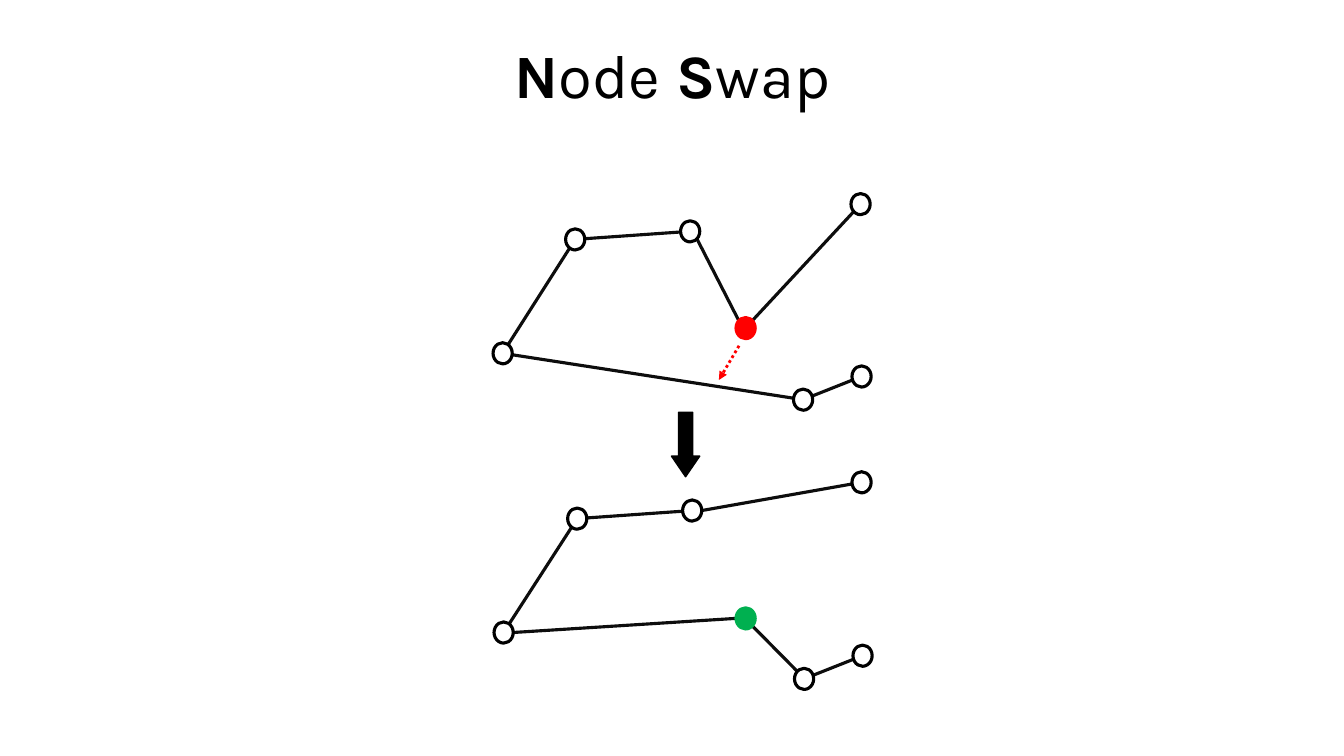
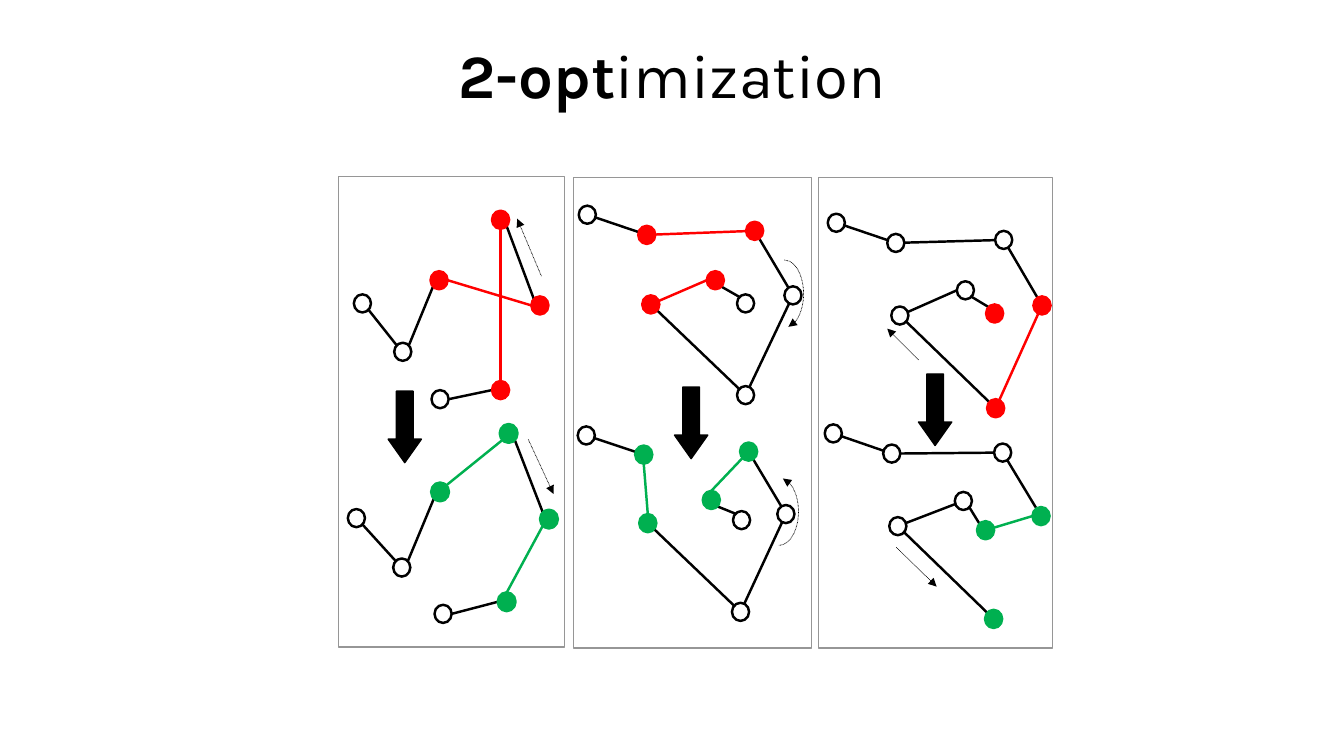
import pptx
import pptx.dml.color
import pptx.enum.dml
import pptx.enum.shapes
import pptx.enum.text
import pptx.oxml.ns
import pptx.util
from lxml import etree

SHAPE = pptx.enum.shapes.MSO_SHAPE
PX = 9144  # EMU; 100 px to the inch
BLACK, INK, WHITE, GREY = "000000", "0D0D0D", "FFFFFF", "969696"
RED, GREEN = "FF0000", "00B050"

# ---- Content -------------------------------------------------------------
# Each tour: left and top of its nodes, the marked nodes and their colour,
# and edges "node:side-node:side" (no side means the centre of the node).
NODE_SWAP = {
    "title": [("N", True), ("ode", False), (" S", True), ("wap", False)],
    "title_box": (92, 5, 1150, 145),
    "node": (19, 21), "line": 2.25, "ink": INK,
    "step_arrow": (28, 64, 0.73),
    "panels": [{
        "frame": None,
        "step": (666, 409),
        "tours": [
            {"nodes": {"a": (489, 340), "b": (561, 227), "c": (675, 219),
                       "d": (730, 315), "e": (844, 192), "f": (787, 386),
                       "g": (845, 363)},
             "mark": RED, "marked": "d",
             "edges": "a-b b-c c:br-d:tl d:tr-e:bl a-f f-g",
             "marked_edges": ""},
            {"nodes": {"a": (490, 617), "b": (563, 504), "c": (677, 496),
                       "d": (730, 603), "e": (845, 468), "f": (788, 663),
                       "g": (846, 640)},
             "mark": GREEN, "marked": "d",
             "edges": "a-b b-c c:r-e a:r-d:l d:br-f:tl f-g",
             "marked_edges": ""},
        ],
        "moves": [((733, 343), (713, 377), RED, 2)],
        "turns": [],
    }],
}

TWO_OPT = {
    "title": [("2-opt", True), ("imization", False)],
    "title_box": (361, 5, 611, 145),
    "node": (17, 18), "line": 1.75, "ink": BLACK,
    "step_arrow": (33, 71, 0.706),
    "panels": [
        {"frame": (336, 175, 224, 467),
         "step": (385, 388),
         "tours": [
             {"nodes": {"a": (351, 292), "b": (391, 340), "c": (427, 269),
                        "d": (527, 294), "e": (488, 209), "f": (488, 378),
                        "g": (428, 387)},
              "mark": RED, "marked": "cdef",
              "edges": "a:br-b:tl b:tr-c:bl d:tl-e:br f:l-g:r",
              "marked_edges": "c:r-d:l e:b-f:t"},
             {"nodes": {"a": (345, 505), "b": (390, 554), "c": (428, 479),
                        "d": (496, 421), "e": (536, 506), "f": (494, 588),
                        "g": (431, 600)},
              "mark": GREEN, "marked": "cdef", "mark_line": 2.25,
              "edges": "a:br-b:tl b:tr-c:bl d:br-e:tl f:l-g:r",
              "marked_edges": "c:tr-d:bl e:bl-f:t"},
         ],
         "moves": [((537, 274), (513, 217), BLACK, 0.5),
                   ((524, 436), (549, 490), BLACK, 0.5)],
         "turns": []},
        {"frame": (569, 176, 236, 467),
         "step": (669, 384),
         "tours": [
             {"nodes": {"a": (574, 204), "b": (633, 224), "c": (740, 220),
                        "d": (778, 284), "e": (731, 383), "f": (637, 293),
                        "g": (701, 269), "h": (731, 292)},
              "mark": RED, "marked": "bcfg",
              "edges": "a-b c-d d-e e-f g:br-h:tl",
              "marked_edges": "b-c f-g:l"},
             {"nodes": {"a": (573, 423), "b": (630, 442), "c": (734, 439),
                        "d": (771, 501), "e": (726, 598), "f": (634, 510),
                        "g": (697, 487), "h": (727, 507)},
              "mark": GREEN, "marked": "bcfg",
              "edges": "a-b c-d d-e e-f g:br-h:tl",
              "marked_edges": "b:b-f:t c:bl-g:t"},
         ],
         "moves": [],
         # box, start and end angle, end with the arrowhead
         "turns": [((759, 258, 38, 67), 270, 83, "a:tailEnd"),
                   ((753, 474, 39, 67), 277, 90, "a:headEnd")]},
        {"frame": (812, 176, 232, 467),
         "step": (911, 371),
         "tours": [
             {"nodes": {"a": (821, 212), "b": (880, 232), "c": (987, 229),
                        "d": (1025, 294), "e": (979, 396), "f": (884, 304),
                        "g": (949, 279), "h": (978, 302)},
              "mark": RED, "marked": "deh",
              "edges": "a-b b-c c-d e-f f-g:l g:br-h:tl",
              "marked_edges": "d-e"},
             {"nodes": {"a": (818, 421), "b": (876, 441), "c": (986, 440),
                        "d": (1024, 503), "e": (977, 605), "f": (882, 513),
                        "g": (947, 488), "h": (969, 517)},
              "mark": GREEN, "marked": "deh",
              "edges": "a-b b-c c-d e-f f-g g:br-h:tl",
              "marked_edges": "d:l-h"},
         ],
         "moves": [((911, 357), (880, 326), BLACK, 0.5),
                   ((889, 543), (929, 582), BLACK, 0.5)],
         "turns": []},
    ],
}


# ---- Drawing helpers -----------------------------------------------------
def px(*lengths):
    return [pptx.util.Emu(round(length * PX)) for length in lengths]


def rgb(code):
    return pptx.dml.color.RGBColor.from_string(code)


def apply(target, values):
    for attribute, value in values.items():
        setattr(target, attribute, value)


def stroke(line, colour, width, arrow_end=None):
    """Colour a line; with an arrowhead it is dotted as well."""
    line.color.rgb = rgb(colour)
    line.width = pptx.util.Pt(width)
    if arrow_end:
        line.dash_style = pptx.enum.dml.MSO_LINE.ROUND_DOT
        end = etree.SubElement(line._get_or_add_ln(),
                               pptx.oxml.ns.qn(arrow_end))
        end.set("type", "triangle")


def add_block(slide, kind, box, fill, colour, width, arrow_end=None):
    block = slide.shapes.add_shape(kind, *px(*box))
    block.shadow.inherit = False
    if fill:
        block.fill.solid()
        block.fill.fore_color.rgb = rgb(fill)
    else:
        block.fill.background()
    stroke(block.line, colour, width, arrow_end)
    return block


def add_line(slide, start, end, colour, width, arrow_end=None):
    link = slide.shapes.add_connector(
        pptx.enum.shapes.MSO_CONNECTOR.STRAIGHT, *px(*start, *end))
    stroke(link.line, colour, width, arrow_end)
    etree.SubElement(link._element.spPr, pptx.oxml.ns.qn("a:effectLst"))


def add_title(slide, runs, box):
    title = slide.shapes.add_textbox(*px(*box)).text_frame
    apply(title, {"word_wrap": True,
                  "vertical_anchor": pptx.enum.text.MSO_ANCHOR.MIDDLE})
    paragraph = title.paragraphs[0]
    apply(paragraph, {"alignment": pptx.enum.text.PP_ALIGN.CENTER,
                      "line_spacing": 0.9})
    for words, bold in runs:
        run = paragraph.add_run()
        run.text = words
        apply(run.font, {"name": "Karla", "size": pptx.util.Pt(44),
                         "bold": bold})
        run.font.color.rgb = rgb(BLACK)


# ---- Tours ---------------------------------------------------------------
def anchor(nodes, place, size):
    """Point on a node: its centre, or the named side of its outline."""
    name, _, side = place.partition(":")
    reach = 0.71 if len(side) == 2 else 1
    across = ("r" in side) - ("l" in side)
    down = ("b" in side) - ("t" in side)
    return [corner + length / 2 * (1 + reach * step)
            for corner, length, step in zip(nodes[name], size, (across, down))]


def add_tour(slide, tour, look):
    nodes, size, width = tour["nodes"], look["node"], look["line"]
    for edges, colour in ((tour["edges"], look["ink"]),
                          (tour["marked_edges"], tour["mark"])):
        for edge in edges.split():
            start, end = (anchor(nodes, place, size)
                          for place in edge.split("-"))
            add_line(slide, start, end, colour, width)
    for name, corner in nodes.items():
        if name in tour["marked"]:
            style = tour["mark"], tour["mark"], tour.get("mark_line", width)
        else:
            style = WHITE, BLACK, width
        add_block(slide, SHAPE.OVAL, (*corner, *size), *style)


def add_panel(slide, panel, look):
    if panel["frame"]:
        add_block(slide, SHAPE.RECTANGLE, panel["frame"], None, GREY, 1)
    for tour in panel["tours"]:
        add_tour(slide, tour, look)
    width, height, head = look["step_arrow"]
    step = add_block(slide, SHAPE.DOWN_ARROW,
                     (*panel["step"], width, height), BLACK, BLACK, 1)
    step.adjustments[0], step.adjustments[1] = 0.5, head
    for start, end, colour, weight in panel["moves"]:
        add_line(slide, start, end, colour, weight, "a:tailEnd")
    for box, first, last, arrow_end in panel["turns"]:
        turn = add_block(slide, SHAPE.ARC, box, None, BLACK, 0.5, arrow_end)
        # 60000 units a degree, 100000 units to one
        turn.adjustments[0], turn.adjustments[1] = first * 0.6, last * 0.6


def main():
    deck = pptx.Presentation()
    deck.slide_width, deck.slide_height = px(1333, 750)
    for topic in (NODE_SWAP, TWO_OPT):
        slide = deck.slides.add_slide(deck.slide_layouts[6])
        add_title(slide, topic["title"], topic["title_box"])
        for panel in topic["panels"]:
            add_panel(slide, panel, topic)
    deck.save("out.pptx")


if __name__ == "__main__":
    main()
